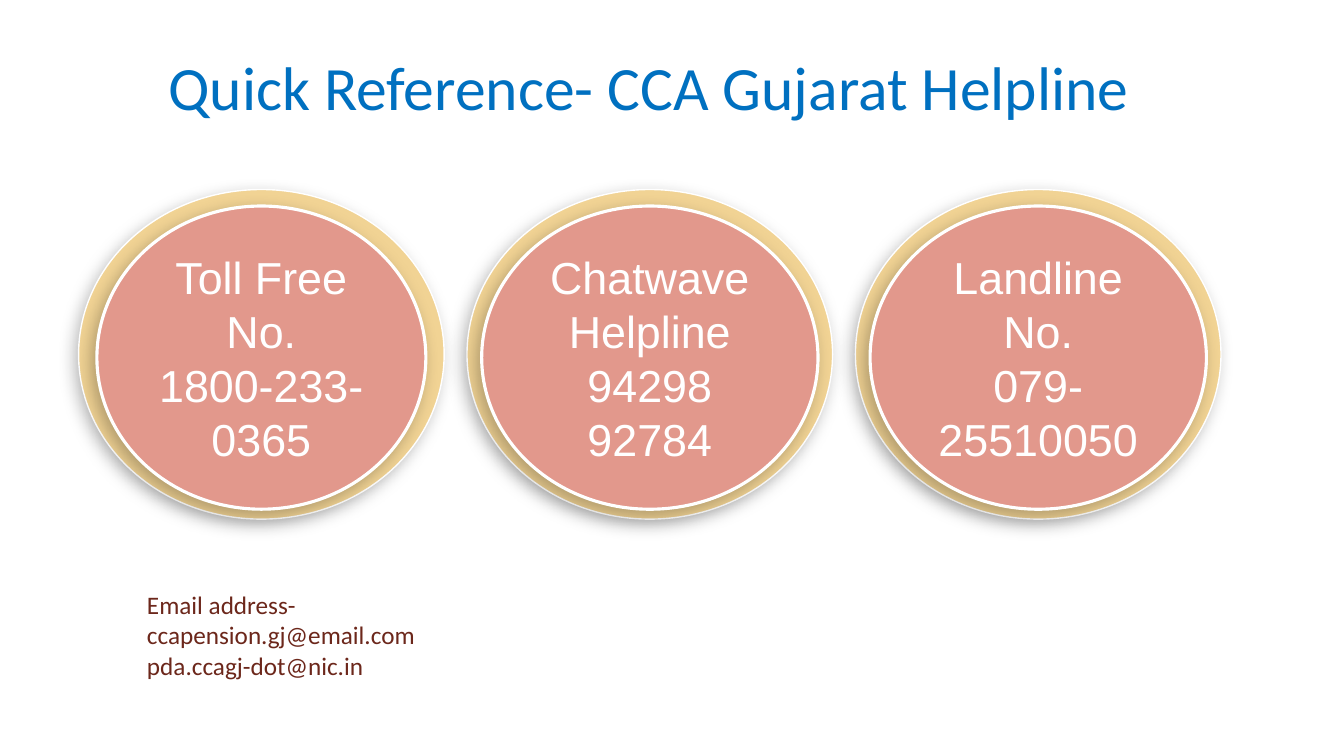
import pptx
import pptx.util
import pptx.dml.color
import pptx.enum.shapes
import pptx.enum.text
import pptx.oxml
import pptx.oxml.ns

SLIDE_W = pptx.util.Inches(13.333)
SLIDE_H = pptx.util.Inches(7.5)
RING, DISC, WHITE = "F1D394", "E2988C", "FFFFFF"
TITLE, EMAIL = "0070C0", "6C271B"

# Heading, number, and width of the disc as a share of its ring
HELPLINES = [
    ("Toll Free No.", "1800-233-0365", 0.9),
    ("Chatwave Helpline", "94298 92784", 0.92),
    ("Landline No.", "079-25510050", 0.92),
]
EMAIL_LINES = ["Email address-", "ccapension.gj@email.com", "pda.ccagj-dot@nic.in"]


def rgb(value):
    return pptx.dml.color.RGBColor.from_string(value)


def area(x, y, w, h):
    """Box from percentages of the slide's width and height."""
    return (int(SLIDE_W * x / 100), int(SLIDE_H * y / 100),
            int(SLIDE_W * w / 100), int(SLIDE_H * h / 100))


def write(tf, lines, font, size, color, align):
    tf.word_wrap = True
    for i, line in enumerate(lines):
        p = tf.paragraphs[0] if i == 0 else tf.add_paragraph()
        p.alignment = align
        r = p.add_run()
        r.text = line
        r.font.name = font
        r.font.size = pptx.util.Pt(size)
        r.font.color.rgb = rgb(color)


def add_shadow(sp):
    blur, dist = pptx.util.Pt(12), pptx.util.Pt(5)
    sp._element.spPr.append(pptx.oxml.parse_xml(
        f'<a:effectLst {pptx.oxml.ns.nsdecls("a")}>'
        f'<a:outerShdw blurRad="{blur}" dist="{dist}" dir="8100000" rotWithShape="0">'
        '<a:srgbClr val="000000"><a:alpha val="26000"/></a:srgbClr>'
        '</a:outerShdw></a:effectLst>'))


def add_ellipse(slide, box, fill, line_width):
    sp = slide.shapes.add_shape(pptx.enum.shapes.MSO_SHAPE.OVAL, *box)
    sp.fill.solid()
    sp.fill.fore_color.rgb = rgb(fill)
    sp.line.color.rgb = rgb(WHITE)
    sp.line.width = pptx.util.Pt(line_width)
    add_shadow(sp)
    return sp


def add_title(slide, box):
    sp = slide.shapes.title
    sp.left, sp.top, sp.width, sp.height = box
    tf = sp.text_frame
    tf.auto_size = pptx.enum.text.MSO_AUTO_SIZE.NONE
    tf.vertical_anchor = pptx.enum.text.MSO_ANCHOR.TOP
    write(tf, ["Quick Reference- CCA Gujarat Helpline"], "Calibri", 44, TITLE,
          pptx.enum.text.PP_ALIGN.LEFT)


def add_helpline(slide, box, heading, number, share):
    # Outer ring
    x, y, w, h = box
    add_ellipse(slide, box, RING, 1)
    # Inner disc with its text, centred across the ring
    disc_w, disc_h = int(w * share), int(h * 0.92)
    disc_box = (x + (w - disc_w) // 2, y + int(h * 0.05), disc_w, disc_h)
    sp = add_ellipse(slide, disc_box, DISC, 2.25)
    tf = sp.text_frame
    tf.vertical_anchor = pptx.enum.text.MSO_ANCHOR.MIDDLE
    write(tf, [heading, number], "Arial", 32, WHITE,
          pptx.enum.text.PP_ALIGN.CENTER)


def add_email(slide, box):
    tf = slide.shapes.add_textbox(*box).text_frame
    tf.auto_size = pptx.enum.text.MSO_AUTO_SIZE.SHAPE_TO_FIT_TEXT
    write(tf, EMAIL_LINES, "Calibri", 18, EMAIL, pptx.enum.text.PP_ALIGN.LEFT)


def main():
    prs = pptx.Presentation()
    prs.slide_width, prs.slide_height = SLIDE_W, SLIDE_H
    slide = prs.slides.add_slide(prs.slide_layouts.get_by_name("Title Only"))

    add_title(slide, area(11.78, 5.87, 76.2, 21.2))
    for i, helpline in enumerate(HELPLINES):
        add_helpline(slide, area(5.85 + 28.9 * i, 25.07, 27.2, 43.6), *helpline)
    add_email(slide, area(10.2, 77.33, 33.3, 13.47))

    prs.save("out.pptx")


if __name__ == "__main__":
    main()
